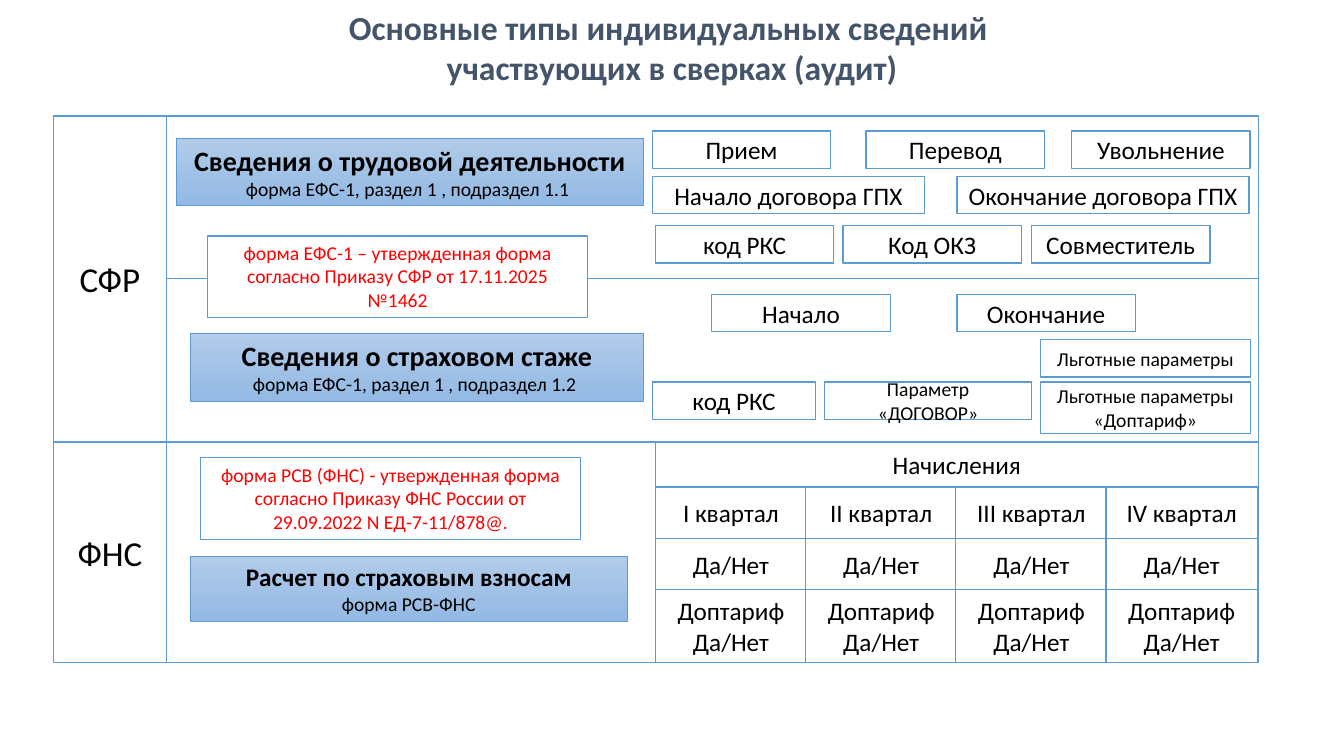
import pptx
import pptx.util
import pptx.dml.color
import pptx.enum.shapes
import pptx.enum.text
import pptx.oxml.xmlchemy
from lxml import etree

RGBColor = pptx.dml.color.RGBColor
WHITE = RGBColor(0xFF, 0xFF, 0xFF)
BLACK = RGBColor(0x00, 0x00, 0x00)
RED = RGBColor(0xFF, 0x00, 0x00)
TITLE_BLUE = RGBColor(0x44, 0x54, 0x6A)
BORDER_BLUE = RGBColor(0x5B, 0x9B, 0xD5)
LIGHT_BLUE = RGBColor(0xB1, 0xCB, 0xE9)
MID_BLUE = RGBColor(0x93, 0xB9, 0xE4)
PX = 9144  # 100 px to the inch
ANCHOR = pptx.enum.text.MSO_ANCHOR
GROW = pptx.enum.text.MSO_AUTO_SIZE.SHAPE_TO_FIT_TEXT


def write(frame, lines, color):
    """Fill a frame with centred paragraphs given as (text, size, bold)."""
    frame.word_wrap = True
    for number, (text, size, bold) in enumerate(lines):
        paragraph = frame.paragraphs[0] if number == 0 else frame.add_paragraph()
        paragraph.alignment = pptx.enum.text.PP_ALIGN.CENTER
        run = paragraph.add_run()
        run.text = text
        run.font.color.rgb = color
        style = {"name": "Calibri", "size": pptx.util.Pt(size), "bold": bold}
        for key, value in style.items():
            setattr(run.font, key, value)


def add_box(left, top, width, height, lines=(), color=BLACK, anchor=ANCHOR.MIDDLE):
    box = slide.shapes.add_shape(
        pptx.enum.shapes.MSO_SHAPE.RECTANGLE,
        left * PX, top * PX, width * PX, height * PX)
    box.shadow.inherit = False
    box.fill.solid()
    box.fill.fore_color.rgb = WHITE
    box.line.color.rgb = BORDER_BLUE
    box.line.width = pptx.util.Pt(1)
    box.text_frame.vertical_anchor = anchor
    write(box.text_frame, lines, color)
    return box


deck = pptx.Presentation()
deck.slide_width, deck.slide_height = 1333 * PX, 750 * PX
slide = deck.slides.add_slide(deck.slide_layouts[5])

title = slide.shapes.title
place = {"left": 0, "top": 0, "width": 1333, "height": 88}
for key, value in place.items():
    setattr(title, key, value * PX)
title_format = {"margin_left": 0, "margin_top": 7 * PX, "margin_right": 0,
                "margin_bottom": 0, "vertical_anchor": ANCHOR.TOP, "auto_size": GROW}
for key, value in title_format.items():
    setattr(title.text_frame, key, value)
write(title.text_frame, [("Основные типы индивидуальных сведений ", 24, True),
                         ("участвующих в сверках (аудит)", 24, True)], TITLE_BLUE)

# Agencies and their panels
panels = {}
for agency, top, height in [("ФНС", 439, 218), ("СФР", 115, 323)]:
    panels[agency] = add_box(165, top, 1083, height)
    add_box(53, top, 112, height, [(agency, 25, False)])

divider = slide.shapes.add_connector(
    pptx.enum.shapes.MSO_CONNECTOR.STRAIGHT, 165 * PX, 277 * PX, 1248 * PX, 277 * PX)
divider.begin_connect(panels["СФР"], 1)
divider.end_connect(panels["СФР"], 3)
divider.line.color.rgb = BORDER_BLUE
divider.line.width = pptx.util.Pt(1)
etree.SubElement(divider._element.spPr, pptx.oxml.ns.qn("a:effectLst"))

# Reports
for left, top, width, height, report, size, form in [
    (175, 137, 463, 67, "Сведения о трудовой деятельности", 20,
     "форма ЕФС-1, раздел 1 , подраздел 1.1 "),
    (189, 331, 449, 67, "Сведения о страховом стаже", 20,
     "форма ЕФС-1, раздел 1 , подраздел 1.2 "),
    (189, 552, 433, 64, "Расчет по страховым взносам", 18, "форма РСВ-ФНС"),
]:
    heading = add_box(left, top, width, height,
                      [(report, size, True), (form, 14, False)], anchor=ANCHOR.TOP)
    heading.text_frame.auto_size = GROW
    heading.line.width = pptx.util.Pt(0.5)
    heading.fill.gradient()
    heading.fill.gradient_angle = 270
    for stop, shade in zip(heading.fill.gradient_stops, (LIGHT_BLUE, MID_BLUE)):
        stop.color.rgb = shade

# Orders that approve the forms
for left, top, order in [
    (206, 234, "форма ЕФС-1 – утвержденная форма согласно Приказу СФР "
               "от 17.11.2025 №1462"),
    (199, 454, "форма РСВ (ФНС) - утвержденная форма согласно Приказу ФНС России "
               "от 29.09.2022 N ЕД-7-11/878@."),
]:
    note = add_box(left, top, 377, 81, [(order, 14, False)], RED, ANCHOR.TOP)
    note.text_frame.auto_size = GROW

# Parameters of the reports: top, then left, width, size and label of each
for top, parameters in [
    (130, [(647, 177, 18, "Прием"), (859, 177, 18, "Перевод"),
           (1063, 177, 18, "Увольнение")]),
    (175, [(647, 270, 18, "Начало договора ГПХ"),
           (949, 290, 18, "Окончание договора ГПХ")]),
    (224, [(650, 177, 18, "код РКС"), (836, 177, 18, "Код ОКЗ"),
           (1023, 177, 18, "Совместитель")]),
    (292, [(706, 177, 18, "Начало"), (949, 177, 18, "Окончание")]),
    (337, [(1032, 208, 14, "Льготные параметры")]),
    (379, [(647, 162, 18, "код РКС"), (818, 205, 14, "Параметр «ДОГОВОР»")]),
]:
    for left, width, size, label in parameters:
        add_box(left, top, width, 37, [(label, size, False)])
add_box(1032, 379, 208, 51,
        [("Льготные параметры", 14, False), ("«Доптариф»", 14, False)])

# Quarterly accruals
add_box(650, 439, 598, 44, [("Начисления", 18, False)])
for column, quarter in enumerate(["I", "II", "III", "IV"]):
    for top, height, label in [(483, 51, f"{quarter} квартал"),
                               (534, 51, "Да/Нет"),
                               (585, 72, "Доптариф Да/Нет")]:
        add_box(650 + 149 * column, top, 150, height, [(label, 18, False)])

deck.save("out.pptx")
